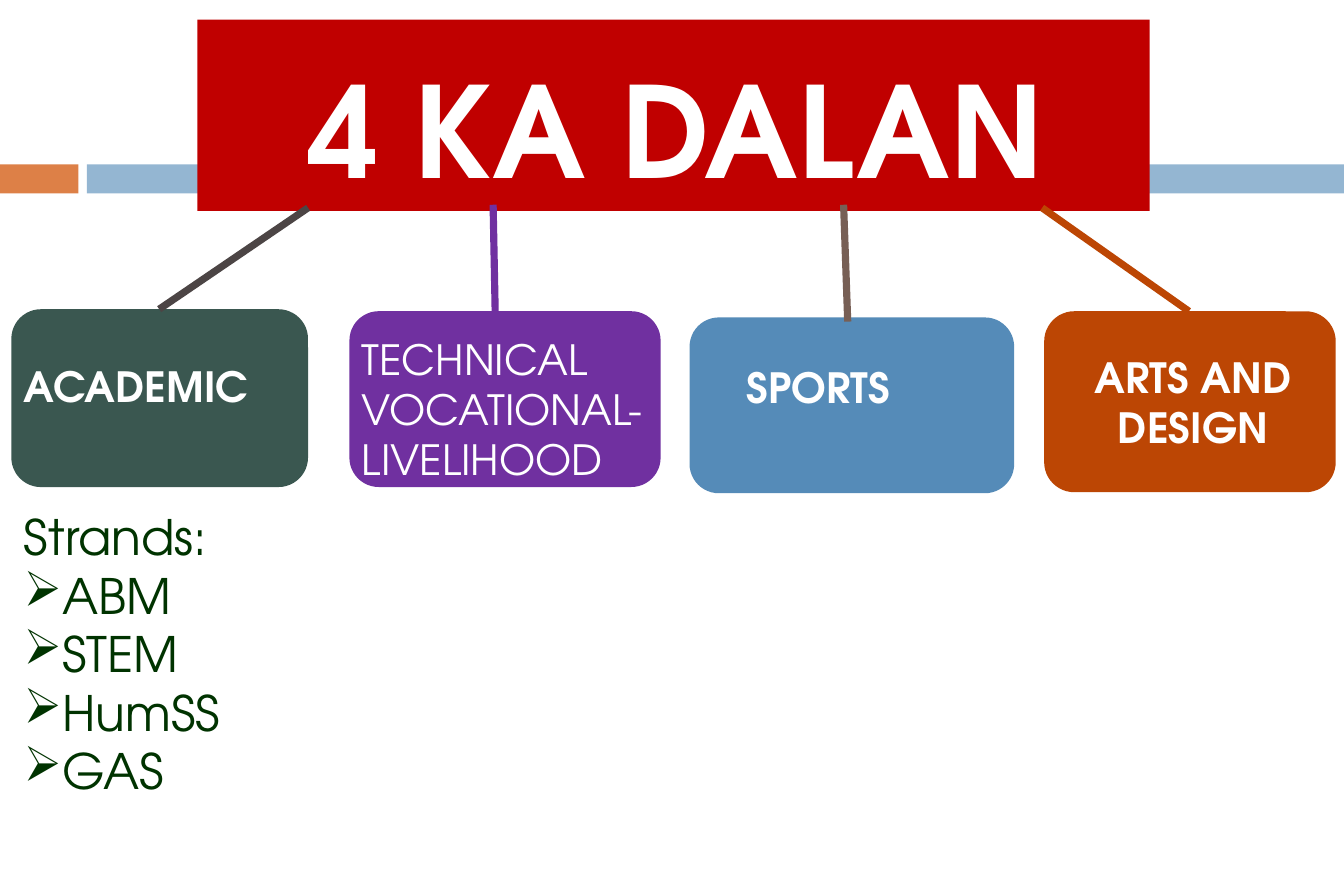
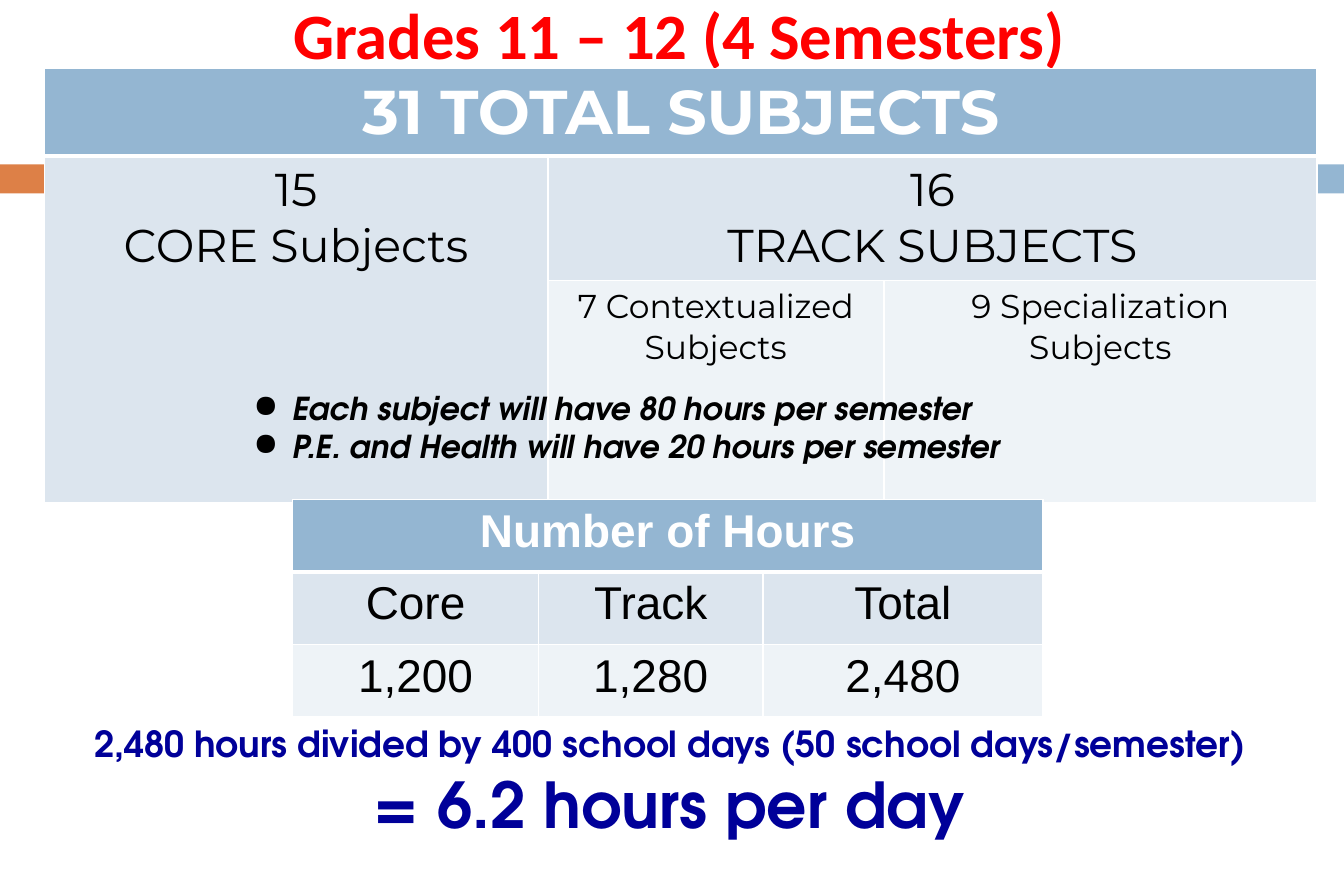
from dataclasses import dataclass
from typing import Optional

from lxml import etree
from pptx import Presentation
from pptx.dml.color import RGBColor
from pptx.enum import shapes, text
from pptx.oxml import ns
from pptx.util import Inches, Pt

COLORS = {
    "orange": "DD8047", "blue": "94B6D2", "pale": "DCE5EE", "paler": "EEF3F7",
    "white": "FFFFFF", "black": "000000", "banner": "C00000", "red": "FF0000",
    "academic": "3A5750", "technical": "7030A0", "sports": "558BB8", "arts": "BC4604",
    "charcoal": "4C4545", "brown": "775F55", "green": "003300", "navy": "000099",
}
ADVENTOR, CALIBRI, MONTSERRAT, ARIAL = "TeX Gyre Adventor", "Calibri", "Montserrat", "Arial"
LEFT, CENTER = text.PP_ALIGN.LEFT, text.PP_ALIGN.CENTER
TOP, MIDDLE = text.MSO_ANCHOR.TOP, text.MSO_ANCHOR.MIDDLE
RECTANGLE, ROUNDED = shapes.MSO_SHAPE.RECTANGLE, shapes.MSO_SHAPE.ROUNDED_RECTANGLE


@dataclass
class Box:
    left: float
    top: float
    width: float
    height: float

    def lengths(self) -> list:
        return [Inches(n) for n in (self.left, self.top, self.width, self.height)]


@dataclass
class Line:
    words: str
    size: float
    font: str = ADVENTOR
    color: str = "white"
    bold: bool = False
    italic: bool = False
    align: text.PP_ALIGN = LEFT
    bullet: Optional[str] = None
    indent: float = 0


@dataclass
class Track:
    color: str
    box: Box
    label: Line
    label_box: Box
    line_color: str
    start: tuple
    end: tuple


@dataclass
class Cell:
    row: int
    column: int
    lines: list
    rows: int = 1
    columns: int = 1


TRACKS = [
    Track("academic", Box(0.11, 2.99, 2.87, 1.72), Line("ACADEMIC", 29, bold=True),
          Box(0.11, 3.43, 2.87, 0.61), "charcoal", (2.98, 2.01), (1.54, 2.99)),
    Track("technical", Box(3.38, 3.01, 3.01, 1.7), Line("TECHNICAL VOCATIONAL-LIVELIHOOD", 29),
          Box(3.38, 3.17, 3.14, 1.59), "technical", (4.77, 1.98), (4.79, 3.02)),
    Track("sports", Box(6.67, 3.07, 3.14, 1.7), Line("SPORTS", 29, bold=True),
          Box(7.1, 3.44, 2.26, 0.61), "brown", (8.16, 1.98), (8.2, 3.11)),
    Track("arts", Box(10.1, 3.01, 2.82, 1.75), Line("ARTS AND DESIGN", 29, bold=True, align=CENTER),
          Box(9.97, 3.34, 3.14, 1.1), "arts", (10.08, 2.01), (11.5, 3.01)),
]
BANDS = [("orange", Box(0, 1.59, 0.76, 0.28)), ("blue", Box(0.84, 1.59, 12.16, 0.28))]
ROW_FILLS = ["blue", "pale", "paler"]


def rgb(name: str) -> RGBColor:
    return RGBColor.from_string(COLORS[name])


def write(frame, lines: list[Line]) -> None:
    frame.text = "\n".join(line.words for line in lines)
    for paragraph, line in zip(frame.paragraphs, lines):
        paragraph.alignment = line.align
        font = paragraph.runs[0].font
        font.name, font.size = line.font, Pt(line.size)
        font.bold, font.italic = line.bold, line.italic
        font.color.rgb = rgb(line.color)
        if line.bullet:
            properties = paragraph._p.get_or_add_pPr()
            properties.set("marL", str(Inches(line.indent)))
            properties.set("indent", str(-Inches(line.indent)))
            etree.SubElement(properties, ns.qn("a:buChar")).set("char", line.bullet)


def set_frame(frame, anchor=TOP, left: float = 0.12, top: float = 0.06) -> None:
    frame.word_wrap = True
    frame.auto_size = text.MSO_AUTO_SIZE.NONE
    frame.vertical_anchor = anchor
    frame.margin_left, frame.margin_right = Inches(left), Inches(0.12)
    frame.margin_top, frame.margin_bottom = Inches(top), Inches(0.06)


def add_title(slide, box: Box, line: Line, anchor, left: float = 0.12) -> None:
    title = slide.shapes.title
    title.left, title.top, title.width, title.height = box.lengths()
    set_frame(title.text_frame, anchor, left)
    write(title.text_frame, [line])
    slide.shapes._spTree.append(title._element)


def add_text(slide, box: Box, lines: list[Line], top: float = 0.06) -> None:
    frame = slide.shapes.add_textbox(*box.lengths()).text_frame
    set_frame(frame, top=top)
    write(frame, lines)


def add_block(slide, kind, box: Box, color: str):
    shape = slide.shapes.add_shape(kind, *box.lengths())
    shape.shadow.inherit = False
    shape.fill.solid()
    shape.fill.fore_color.rgb = rgb(color)
    shape.line.fill.background()
    return shape


def add_line(slide, track: Track) -> None:
    ends = [Inches(n) for n in track.start + track.end]
    connector = slide.shapes.add_connector(shapes.MSO_CONNECTOR.STRAIGHT, *ends)
    connector.line.color.rgb = rgb(track.line_color)
    connector.line.width = Pt(5)
    etree.SubElement(connector._element.spPr, ns.qn("a:effectLst"))


def set_borders(cell, row: int) -> None:
    properties = cell._tc.get_or_add_tcPr()
    widths = {"lnL": 1, "lnR": 1, "lnT": 3 if row == 1 else 1, "lnB": 3 if row == 0 else 1}
    for side, width in widths.items():
        border = etree.SubElement(properties, ns.qn(f"a:{side}"), w=str(Pt(width)))
        fill = etree.SubElement(border, ns.qn("a:solidFill"))
        etree.SubElement(fill, ns.qn("a:srgbClr"), val=COLORS["white"])


def add_table(slide, left: float, top: float, widths: list[float], heights: list[float],
              cells: list[Cell]) -> None:
    box = Box(left, top, sum(widths), sum(heights))
    table = slide.shapes.add_table(len(heights), len(widths), *box.lengths()).table
    table.horz_banding = False
    for column, width in zip(table.columns, widths):
        column.width = Inches(width)
    for index, (row, height) in enumerate(zip(table.rows, heights)):
        row.height = Inches(height)
        for cell in row.cells:
            set_borders(cell, index)
            cell.fill.solid()
            cell.fill.fore_color.rgb = rgb(ROW_FILLS[index])
            cell.margin_left = cell.margin_right = Inches(0.13)
            cell.margin_top = cell.margin_bottom = Inches(0.06)
    for item in cells:
        cell = table.cell(item.row, item.column)
        if item.rows * item.columns > 1:
            cell.merge(table.cell(item.row + item.rows - 1, item.column + item.columns - 1))
        write(cell.text_frame, item.lines)


def cell_line(words: str, size: float, font: str, header: bool = False) -> Line:
    return Line(words, size, font, "white" if header else "black", header, align=CENTER)


def add_bands(slide) -> None:
    layout_tree = slide.slide_layout.shapes._spTree
    for position, (color, box) in enumerate(BANDS, 2):
        layout_tree.insert(position, add_block(slide, RECTANGLE, box, color)._element)


def build_tracks(slide) -> None:
    for track in reversed(TRACKS):
        add_block(slide, ROUNDED, track.box, track.color)
    for track in TRACKS:
        add_text(slide, track.label_box, [track.label])
    add_block(slide, RECTANGLE, Box(1.91, 0.19, 9.21, 1.85), "banner")
    add_title(slide, Box(2.18, 0.44, 8.74, 2.06), Line("4 KA DALAN", 88, bold=True), TOP, 0.8)
    for track in TRACKS:
        add_line(slide, track)
    strands = [Line(name, 34, color="green", bullet="➢", indent=0.31)
               for name in ("ABM", "STEM", "HumSS", "GAS")]
    add_text(slide, Box(0.11, 4.84, 2.6, 2.98), [Line("Strands:", 34, color="green")] + strands)


def build_subjects(slide) -> None:
    add_title(slide, Box(0.72, -0.09, 11.7, 0.83),
              Line("Grades 11 – 12 (4 Semesters)", 45, CALIBRI, "red", True, align=CENTER), MIDDLE)
    add_table(slide, 0.43, 0.66, [4.87, 3.25, 4.19], [0.82, 1.12, 2.15], [
        Cell(0, 0, [cell_line("31 TOTAL SUBJECTS", 43, MONTSERRAT, True)], columns=3),
        Cell(1, 0, [cell_line(words, 32, MONTSERRAT) for words in ("15", "CORE Subjects")], rows=2),
        Cell(1, 1, [cell_line(words, 32, MONTSERRAT) for words in ("16", "TRACK SUBJECTS")],
             columns=2),
        Cell(2, 1, [cell_line("7 Contextualized Subjects", 23, MONTSERRAT)]),
        Cell(2, 2, [cell_line("9 Specialization Subjects", 23, MONTSERRAT)]),
    ])
    notes = ["Each subject will have 80 hours per semester",
             "P.E. and Health will have 20 hours per semester"]
    add_text(slide, Box(2.33, 3.33, 8.17, 1.81),
             [Line(words, 22, color="black", bold=True, italic=True, bullet="●", indent=0.38)
              for words in notes], top=0.43)
    hours = [("Core", "Track", "Total"), ("1,200", "1,280", "2,480")]
    add_table(slide, 2.83, 4.83, [2.38, 2.17, 2.71], [0.7] * 3, [
        Cell(0, 0, [cell_line("Number of Hours", 32, ARIAL, True)], columns=3),
        *(Cell(row, column, [cell_line(words, 32, ARIAL)])
          for row, values in enumerate(hours, 1) for column, words in enumerate(values)),
    ])
    results = [("2,480 hours divided by 400 school days (50 school days/semester)", 25),
               ("= 6.2 hours per day", 44)]
    add_text(slide, Box(0.25, 6.92, 12.46, 1.28),
             [Line(words, size, color="navy", bold=True, align=CENTER) for words, size in results])


def main() -> None:
    presentation = Presentation()
    presentation.slide_width, presentation.slide_height = Inches(13), Inches(8.5)
    title_only = presentation.slide_layouts[5]
    tracks, subjects = (presentation.slides.add_slide(title_only) for _ in range(2))
    add_bands(tracks)
    build_tracks(tracks)
    build_subjects(subjects)
    presentation.save("out.pptx")


if __name__ == "__main__":
    main()
